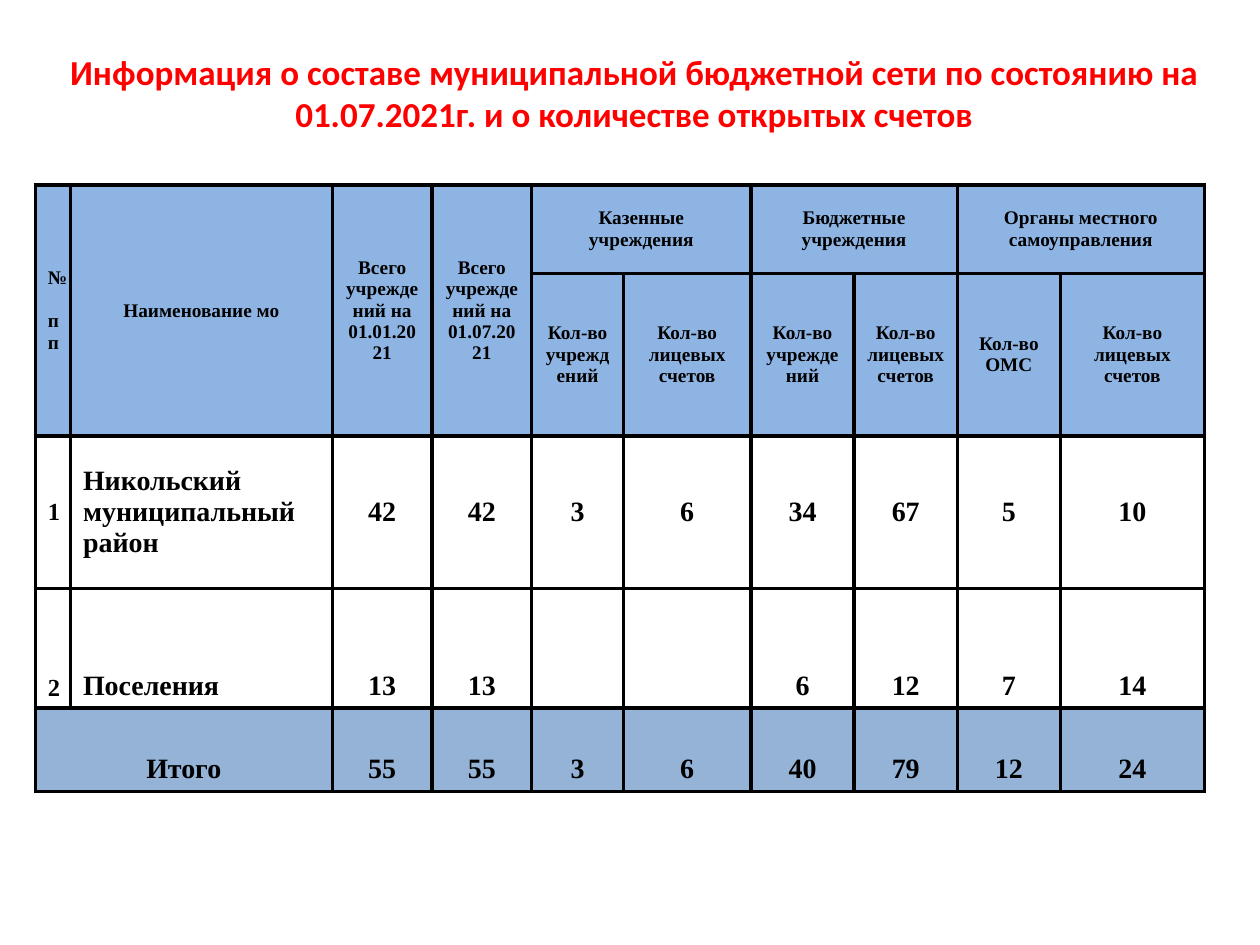
from dataclasses import dataclass

from lxml import etree
from pptx import Presentation
from pptx.dml.color import RGBColor
from pptx.enum.text import MSO_ANCHOR, PP_ALIGN
from pptx.oxml.ns import qn
from pptx.util import Cm, Pt

LEFT, CENTER, RIGHT = PP_ALIGN.LEFT, PP_ALIGN.CENTER, PP_ALIGN.RIGHT
MIDDLE, BOTTOM = MSO_ANCHOR.MIDDLE, MSO_ANCHOR.BOTTOM


@dataclass(frozen=True)
class Theme:
    title_font: str = "Calibri"
    table_font: str = "Times New Roman"
    title_color: str = "FF0000"
    ink: str = "000000"
    header_fill: str = "8EB4E3"
    body_fill: str = "FFFFFF"
    total_fill: str = "95B3D7"
    title_size: int = 20
    header_size: int = 11
    number_size: int = 14
    body_size: int = 16
    border: float = 2.25


THEME = Theme()

COLUMN_WIDTHS = [0.71, 5.28, 2.01, 2.01, 1.85, 2.57, 2.08, 2.08, 2.08, 2.9]
ROW_HEIGHTS = [1.78, 3.28, 3.07, 2.41, 1.68]
ACCOUNTS = "Кол-во лицевых счетов"
INSTITUTIONS = "Кол-во\nучреждений"
ROWS = [
    ["№ пп", "Наименование мо", "Всего учреждений на 01.01.2021",
     "Всего учреждений на 01.07.2021", "Казенные учреждения", "",
     "Бюджетные учреждения", "", "Органы местного самоуправления", ""],
    ["", "", "", "", INSTITUTIONS, ACCOUNTS, INSTITUTIONS, ACCOUNTS,
     "Кол-во\nОМС", ACCOUNTS],
    ["1", "Никольский муниципальный район",
     "42", "42", "3", "6", "34", "67", "5", "10"],
    ["2", "Поселения", "13", "13", "", "", "6", "12", "7", "14"],
    ["Итого", "", "55", "55", "3", "6", "40", "79", "12", "24"],
]
MERGES = (
    [((0, column), (1, column)) for column in range(4)]
    + [((0, column), (0, column + 1)) for column in (4, 6, 8)]
    + [((4, 0), (4, 1))]
)
FILLS = [THEME.header_fill] * 2 + [THEME.body_fill] * 2 + [THEME.total_fill]
ANCHORS = [MIDDLE] * 3 + [BOTTOM] * 2


def write_text(frame, text, *, font, size, color, align=CENTER):
    for index, line in enumerate(text.split("\n")):
        para = frame.paragraphs[0] if index == 0 else frame.add_paragraph()
        para.alignment = align
        span = para.add_run()
        span.text = line
        span.font.name = font
        span.font.size = Pt(size)
        span.font.bold = True
        span.font.color.rgb = RGBColor.from_string(color)


def body_format(row, column):
    if row < 2:
        return {"size": THEME.header_size}
    if row < 4 and column == 0:
        return {"size": THEME.number_size, "align": RIGHT}
    if row < 4 and column == 1:
        return {"size": THEME.body_size, "align": LEFT}
    return {"size": THEME.body_size}


class SlideBuilder:
    def __init__(self, page, theme):
        self.page = page
        self.theme = theme

    def title(self, text, left, top, width, height):
        box = self.page.shapes.add_textbox(Cm(left), Cm(top), Cm(width), Cm(height))
        box.text_frame.word_wrap = True
        write_text(box.text_frame, text, font=self.theme.title_font,
                   size=self.theme.title_size, color=self.theme.title_color)

    def borders(self, cell):
        properties = cell._tc.get_or_add_tcPr()
        for side in ("a:lnL", "a:lnR", "a:lnT", "a:lnB"):
            line = etree.SubElement(properties, qn(side), w=str(Pt(self.theme.border)))
            paint = etree.SubElement(line, qn("a:solidFill"))
            etree.SubElement(paint, qn("a:srgbClr"), val=self.theme.ink)

    def table(self, left, top):
        frame = self.page.shapes.add_table(
            len(ROWS), len(COLUMN_WIDTHS), Cm(left), Cm(top),
            Cm(sum(COLUMN_WIDTHS)), Cm(sum(ROW_HEIGHTS)))
        table = frame.table
        table.first_row = table.horz_banding = False
        for column, width in zip(table.columns, COLUMN_WIDTHS):
            column.width = Cm(width)
        for row, height in zip(table.rows, ROW_HEIGHTS):
            row.height = Cm(height)
        for first, last in MERGES:
            table.cell(*first).merge(table.cell(*last))
        for row, texts in enumerate(ROWS):
            for column, text in enumerate(texts):
                cell = table.cell(row, column)
                self.borders(cell)
                cell.fill.solid()
                cell.fill.fore_color.rgb = RGBColor.from_string(FILLS[row])
                cell.vertical_anchor = ANCHORS[row]
                if text:
                    write_text(cell.text_frame, text, font=self.theme.table_font,
                               color=self.theme.ink, **body_format(row, column))


def main():
    deck = Presentation()
    deck.slide_width, deck.slide_height = Cm(25.4), Cm(19.05)
    builder = SlideBuilder(deck.slides.add_slide(deck.slide_layouts[6]), THEME)
    builder.table(0.71, 3.73)
    builder.title("Информация о составе муниципальной бюджетной сети по состоянию на "
                  "01.07.2021г. и о количестве открытых счетов", 0.89, 0.89, 23.8, 1.96)
    deck.save("out.pptx")


if __name__ == "__main__":
    main()
